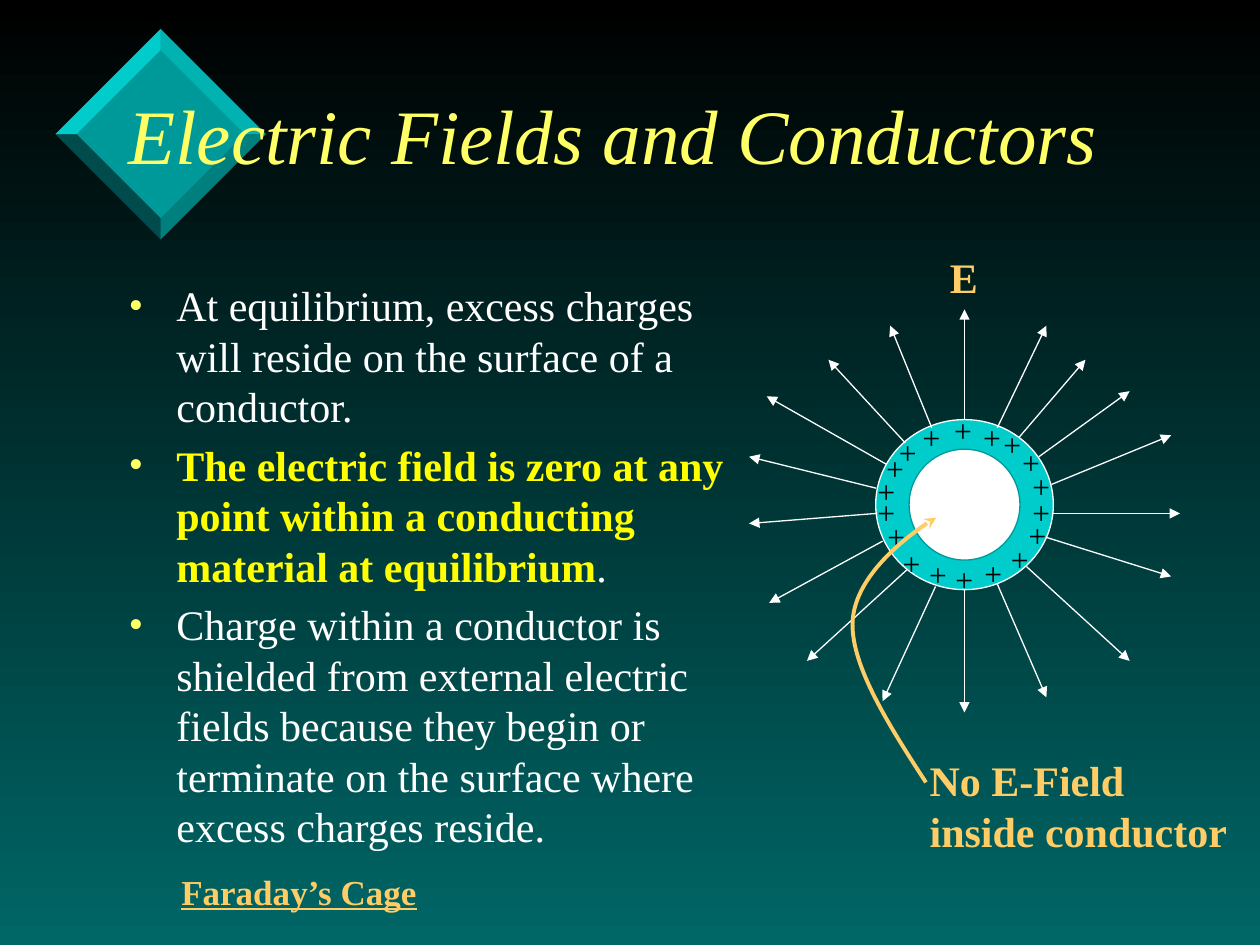
"""Build a slide on electric fields around a charged conductor."""
import lxml.etree
import pptx
import pptx.dml.color
import pptx.enum.shapes
import pptx.enum.text
import pptx.oxml
import pptx.oxml.ns
import pptx.util

SLIDE_WIDTH, SLIDE_HEIGHT = pptx.util.Inches(10), pptx.util.Inches(7.5)
COLUMN, ROW = SLIDE_WIDTH / 100, SLIDE_HEIGHT / 75
FONT = "Times New Roman"
WHITE, BLACK, GOLD, LEMON = "FFFFFF", "000000", "FFCC66", "FFFF66"
CYAN, TEAL, DEEP_TEAL = "00CCCC", "009999", "006666"

BULLETS = [
    [("At equilibrium, excess charges will reside on the surface of a conductor.", {})],
    [("The electric field is zero at any point within a conducting material at equilibrium",
      {"color": "FFFF00", "bold": True}), (".", {})],
    [("Charge within a conductor is shielded from external electric fields because they "
      "begin or terminate on the surface where excess charges reside.", {})],
]
CHARGES = [
    (-0.1, -5.9), (2.2, -5.4), (3.8, -4.8), (5.3, -3.4), (6.1, -1.5), (6.1, 0.6),
    (5.8, 2.4), (4.4, 4.3), (2.3, 5.4), (0, 5.9), (-2.1, 5.5), (-4.2, 4.6),
    (-5.4, 2.5), (-6.2, 0.6), (-6.2, -1.1), (-5.5, -2.9), (-4.5, -4.2), (-2.6, -5.4),
]
FIELD_LINES = [
    ((0, -6.7), (0, -15.5)), ((2.6, -6.1), (6.5, -14.2)), ((4.3, -5.3), (9.6, -11.5)),
    ((5.9, -3.8), (13.1, -9)), ((6.9, -1.6), (16.4, -5.5)), ((7, 0.7), (17.1, 0.7)),
    ((6.5, 2.6), (16.4, 5.7)), ((4.9, 4.9), (13.1, 12.4)), ((2.6, 6.3), (6.5, 15.3)),
    ((0, 6.8), (0, 16.5)), ((-2.3, 6.5), (-6.5, 15.6)), ((-4.6, 5.2), (-12.5, 12.4)),
    ((-6.5, 2.9), (-15.5, 7.8)), ((-7, 0.7), (-17.1, 1.5)), ((-7, -1.3), (-17.1, -3.8)),
    ((-6.2, -3.2), (-15.7, -8.6)), ((-4.7, -4.9), (-10.8, -11.5)),
    ((-2.6, -6.1), (-5.9, -14.2)),
]


def rgb(value):
    """Return the colour for a hex string."""
    return pptx.dml.color.RGBColor.from_string(value)


def grid(*cells):
    """Turn alternating columns and rows into slide lengths."""
    return [round(cell * (ROW if index % 2 else COLUMN)) for index, cell in enumerate(cells)]


def add_xml(parent, tag, **attributes):
    """Append a DrawingML element and return it."""
    return lxml.etree.SubElement(parent, pptx.oxml.ns.qn("a:" + tag), attributes)


def add_run(paragraph, text, size=24, color=WHITE, bold=False, italic=False, underline=False):
    """Add formatted text to a paragraph."""
    run = paragraph.add_run()
    run.text = text
    font = run.font
    font.name, font.size, font.color.rgb = FONT, pptx.util.Pt(size), rgb(color)
    font.bold, font.italic, font.underline = bold, italic, underline


def add_label(shapes, box, text, wrap=False, **text_format):
    """Add a text box holding one formatted paragraph."""
    frame = shapes.add_textbox(*grid(*box)).text_frame
    frame.word_wrap = wrap
    add_run(frame.paragraphs[0], text, **text_format)


def paint(shape, fill, line=None, alpha=None):
    """Give a shape a flat fill and an optional thin outline."""
    shape.shadow.inherit = False
    shape.fill.solid()
    shape.fill.fore_color.rgb = rgb(fill)
    if alpha:
        color = shape.element.spPr.find(".//" + pptx.oxml.ns.qn("a:srgbClr"))
        add_xml(color, "alpha", val=str(alpha * 1000))
    if line:
        shape.line.color.rgb = rgb(line)
        shape.line.width = pptx.util.Pt(0.75)
    else:
        shape.line.fill.background()


def add_arrowhead(shape, color, width, kind):
    """Colour a line and put an arrowhead at its end."""
    shape.line.color.rgb = rgb(color)
    shape.line.width = pptx.util.Pt(width)
    add_xml(shape.line._get_or_add_ln(), "tailEnd", type=kind)


def add_outline(shapes, points, close=True):
    """Build a freeform through points given in columns and rows."""
    corners = [grid(*point) for point in points]
    builder = shapes.build_freeform(*corners[0])
    builder.add_line_segments(corners[1:], close=close)
    return builder.convert_to_shape()


def draw_diamond(slide, box):
    """Draw the bevelled diamond at the back of the slide."""
    left, top, width, height = box
    group = slide.shapes.add_group_shape()
    directions = [(0, -1), (1, 0), (0, 1), (-1, 0)]
    outer, inner = [
        [(left + width * (0.5 + dx * reach), top + height * (0.5 + dy * reach))
         for dx, dy in directions]
        for reach in (0.5, 0.4)
    ]
    paint(add_outline(group.shapes, outer), TEAL)
    faces = [(CYAN, 50), (DEEP_TEAL, 50), (BLACK, 50), (CYAN, None)]
    for side, (color, alpha) in enumerate(faces):
        following = (side + 1) % 4
        corners = [outer[side], outer[following], inner[following], inner[side]]
        paint(add_outline(group.shapes, corners), color, alpha=alpha)
    group.element.getparent().insert(2, group.element)


def fill_title(slide, box, text):
    """Place and write the title."""
    title = slide.shapes.title
    title.left, title.top, title.width, title.height = grid(*box)
    title.text_frame.vertical_anchor = pptx.enum.text.MSO_ANCHOR.MIDDLE
    title.text_frame.auto_size = pptx.enum.text.MSO_AUTO_SIZE.NONE
    paragraph = title.text_frame.paragraphs[0]
    paragraph.alignment = pptx.enum.text.PP_ALIGN.LEFT
    add_run(paragraph, text, size=44, color=LEMON, italic=True)


def fill_body(slide, box, bullets):
    """Place the body and write its bulleted list."""
    body = slide.placeholders[1]
    body.left, body.top, body.width, body.height = grid(*box)
    frame = body.text_frame
    frame.auto_size = pptx.enum.text.MSO_AUTO_SIZE.NONE
    indent = pptx.util.Inches(0.38)
    for index, runs in enumerate(bullets):
        paragraph = frame.add_paragraph() if index else frame.paragraphs[0]
        paragraph.space_before = pptx.util.Pt(4.8)
        properties = paragraph._p.get_or_add_pPr()
        properties.set("marL", str(indent))
        properties.set("indent", str(-indent))
        add_xml(add_xml(properties, "buClr"), "srgbClr", val=LEMON)
        add_xml(properties, "buFont", typeface=FONT)
        add_xml(properties, "buChar", char="•")
        for text, text_format in runs:
            add_run(paragraph, text, **text_format)


def draw_conductor(slide, box):
    """Draw the hollow conductor, its surface charges and its field lines."""
    left, top, width, height = box
    center_x, center_y = left + width / 2, top + height / 2
    shapes = slide.shapes.add_group_shape().shapes
    oval = pptx.enum.shapes.MSO_SHAPE.OVAL
    paint(shapes.add_shape(oval, *grid(*box)), CYAN, WHITE)
    for dx, dy in CHARGES:
        place = (center_x + dx - 1.7, center_y + dy - 2, 3.4, 4)
        add_label(shapes, place, "+", size=18, color=BLACK)
    for (start_x, start_y), (end_x, end_y) in FIELD_LINES:
        ends = grid(center_x + start_x, center_y + start_y, center_x + end_x, center_y + end_y)
        line = shapes.add_connector(pptx.enum.shapes.MSO_CONNECTOR.STRAIGHT, *ends)
        add_arrowhead(line, WHITE, 0.75, "triangle")
        add_xml(line.element.spPr, "effectLst")
    hollow = grid(center_x - 4.4, center_y - 4.4, 8.8, 8.8)
    paint(shapes.add_shape(oval, *hollow), WHITE, TEAL)


def draw_pointer(slide, box):
    """Draw the curved arrow from the bottom of the box to its top right."""
    left, top, width, height = box
    shares = [(0.88, 1), (0.43, 0.78), (0, 0.56), (0.01, 0.4), (0.02, 0.23), (0.76, 0.04), (1, 0)]
    points = [(left + width * x, top + height * y) for x, y in shares]
    pointer = add_outline(slide.shapes, points, close=False)
    segments = list(pointer.element.iter(pptx.oxml.ns.qn("a:lnTo")))
    outline = segments[0].getparent()
    for first in range(0, len(segments), 3):
        curve = add_xml(outline, "cubicBezTo")
        for segment in segments[first:first + 3]:
            curve.append(segment[0])
            outline.remove(segment)
    pointer.shadow.inherit = False
    pointer.fill.background()
    add_arrowhead(pointer, GOLD, 2.25, "stealth")


def main():
    """Build and save the presentation."""
    presentation = pptx.Presentation()
    presentation.slide_width, presentation.slide_height = SLIDE_WIDTH, SLIDE_HEIGHT
    slide = presentation.slides.add_slide(presentation.slide_layouts[1])
    background = slide.background.fill
    background.gradient()
    background.gradient_angle = 270
    for stop, color in zip(background.gradient_stops, (BLACK, DEEP_TEAL)):
        stop.color.rgb = rgb(color)
    draw_diamond(slide, (4.4, 2.3, 16.7, 16.7))
    fill_title(slide, (9.2, 4.6, 85.1, 12.1), "Electric Fields and Conductors")
    fill_body(slide, (9.2, 21.7, 51, 49.1), BULLETS)
    add_label(slide.shapes, (74.4, 19.5, 4.2, 5), "E", color=GOLD, bold=True)
    add_label(slide.shapes, (72.8, 59.4, 26.4, 9), "No E-Field inside conductor",
              wrap=True, color=GOLD, bold=True)
    draw_conductor(slide, (69.5, 33.3, 14.1, 13.5))
    draw_pointer(slide, (67.6, 41.1, 6.7, 21))
    add_label(slide.shapes, (13.4, 68.6, 20.8, 4.3), "Faraday’s Cage",
              size=20, color=GOLD, bold=True, underline=True)
    presentation.save("out.pptx")


if __name__ == "__main__":
    main()
